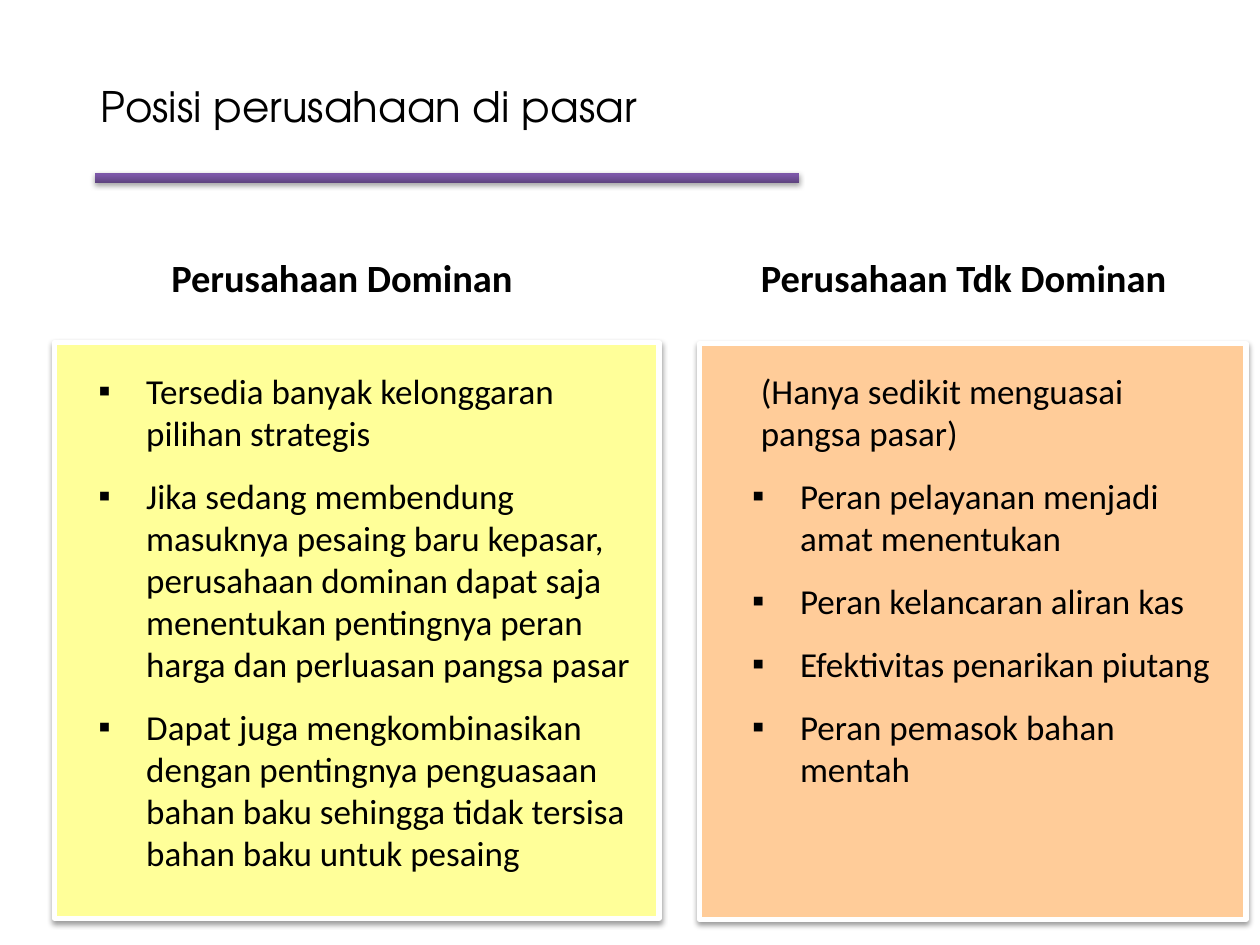
from lxml.etree import SubElement
from pptx import Presentation
from pptx.dml.color import RGBColor
from pptx.enum.shapes import MSO_SHAPE as Shape
from pptx.enum.text import MSO_ANCHOR as Anchor, MSO_AUTO_SIZE as AutoSize, PP_ALIGN as Align
from pptx.oxml.ns import qn
from pptx.util import Pt

BODY_FONT, TITLE_FONT = "Calibri", "TeX Gyre Adventor"
BULLET = "▪"
HANGING = 27.36
TEXT_INDENT = 5
COMPARISON_LAYOUT = 4

# heading, heading box, list box, panel box, panel colour, intro line, points
COLUMNS = [
    ("Perusahaan Dominan", (85.7, 141.8, 217.4, 33.8),
     (49, 207.4, 329, 317.5), (31, 195.8, 345.6, 329), "FFFF99", None,
     ["Tersedia banyak kelonggaran pilihan strategis",
      "Jika sedang membendung masuknya pesaing baru kepasar, perusahaan dominan "
      "dapat saja menentukan pentingnya peran harga dan perluasan pangsa pasar",
      "Dapat juga mengkombinasikan dengan pentingnya penguasaan bahan baku "
      "sehingga tidak tersisa bahan baku untuk pesaing"]),
    ("Perusahaan Tdk Dominan", (422.6, 141.8, 254.2, 33.8),
     (422.6, 207.4, 278, 296.6), (399.6, 196.5, 312.5, 329), "FFCC99",
     "(Hanya sedikit menguasai pangsa pasar)",
     ["Peran pelayanan menjadi amat menentukan",
      "Peran kelancaran aliran kas",
      "Efektivitas penarikan piutang",
      "Peran pemasok bahan mentah"]),
]


def color(code):
    return RGBColor.from_string(code)


def place(shape, bounds):
    shape.left, shape.top, shape.width, shape.height = map(Pt, bounds)


def add_shadow(shape, opacity):
    """Give the shape a soft shadow falling straight down."""
    shape.shadow.inherit = False
    effects = shape._element.spPr.find(qn("a:effectLst"))
    shadow = SubElement(effects, qn("a:outerShdw"), blurRad=str(Pt(3.1)),
                        dist=str(Pt(1.6)), dir="5400000", rotWithShape="0")
    black = SubElement(shadow, qn("a:srgbClr"), val="000000")
    SubElement(black, qn("a:alpha"), val=str(opacity * 1000))


def add_panel(page, bounds, fill):
    panel = page.shapes.add_shape(Shape.RECTANGLE, *map(Pt, bounds))
    panel.fill.solid()
    panel.fill.fore_color.rgb = color(fill)
    panel.line.color.rgb = color("FFFFFF")
    panel.line.width = Pt(3)
    add_shadow(panel, 38)
    # Panels lie behind the text placeholders
    page.shapes._spTree.insert(2, panel._element)


def add_rule(page):
    rule = page.shapes.add_shape(Shape.ROUNDED_RECTANGLE, Pt(54), Pt(98.6), Pt(402.5), Pt(5.8))
    rule.adjustments[0] = 0
    rule.fill.gradient()
    rule.fill.gradient_angle = 90
    stops = rule.fill.gradient_stops
    for stop, position, code in zip(stops, (0, 0.8), ("5F4480", "7C57A8")):
        stop.position = position
        stop.color.rgb = color(code)
    rule.line.fill.background()
    add_shadow(rule, 35)


def prepare(box, bounds, anchor, wrap=True):
    place(box, bounds)
    frame = box.text_frame
    frame.auto_size = AutoSize.NONE
    frame.word_wrap = wrap
    frame.vertical_anchor = anchor
    return frame


def write(para, text, size, font=BODY_FONT, bold=False, bullet=False, indent=0):
    properties = para._p.get_or_add_pPr()
    properties.set("marL", str(Pt(HANGING if bullet else indent)))
    properties.set("indent", str(Pt(-HANGING if bullet else 0)))
    if bullet:
        SubElement(properties, qn("a:buFont"), typeface="Arial")
        SubElement(properties, qn("a:buChar"), char=BULLET)
    else:
        SubElement(properties, qn("a:buNone"))
    para.alignment = Align.LEFT
    para.space_before = Pt(0)
    span = para.add_run()
    span.text = text
    span.font.name = font
    span.font.size = Pt(size)
    span.font.bold = bold
    span.font.color.rgb = color("000000")


def write_list(frame, intro, points):
    lines = [(intro, False)] if intro else []
    lines += [(point, True) for point in points]
    for number, (text, bullet) in enumerate(lines):
        para = frame.add_paragraph() if number else frame.paragraphs[0]
        write(para, text, 20, bullet=bullet, indent=TEXT_INDENT)
        if number:
            para.space_before = Pt(12)


def main():
    deck = Presentation()
    deck.slide_width, deck.slide_height = Pt(720), Pt(540)
    page = deck.slides.add_slide(deck.slide_layouts[COMPARISON_LAYOUT])

    # Title and the rule beneath it
    title = prepare(page.shapes.title, (42.5, 42.5, 476, 36), Anchor.MIDDLE)
    write(title.paragraphs[0], "Posisi perusahaan di pasar", 24, TITLE_FONT, indent=8)
    add_rule(page)

    # Two columns: heading, panel and list
    for number, column in enumerate(COLUMNS):
        heading, heading_box, list_box, panel_box, fill, intro, points = column
        add_panel(page, panel_box, fill)
        frame = prepare(page.placeholders[2 * number + 1], heading_box, Anchor.TOP, wrap=False)
        write(frame.paragraphs[0], heading, 22, bold=True, indent=TEXT_INDENT)
        body = prepare(page.placeholders[2 * number + 2], list_box, Anchor.TOP)
        write_list(body, intro, points)

    deck.save("out.pptx")


if __name__ == "__main__":
    main()
